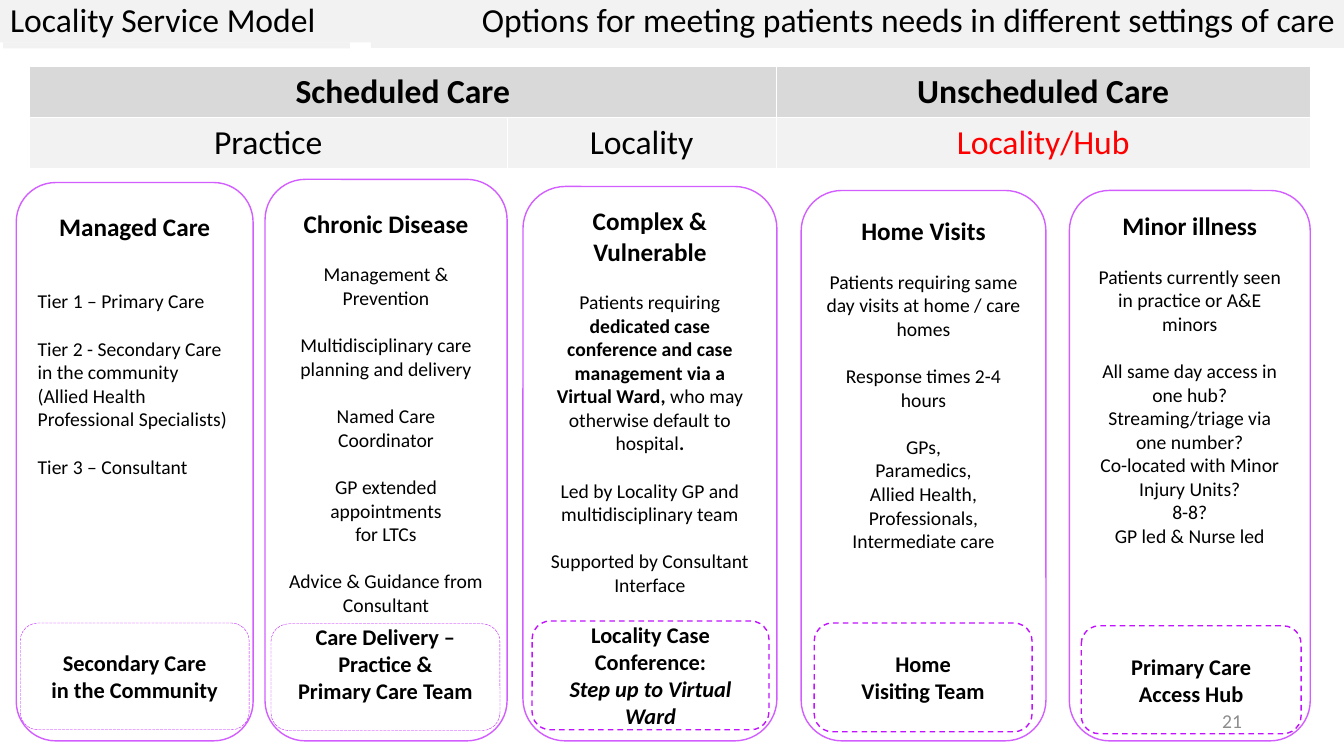
import pptx
import pptx.util
import pptx.dml.color
import pptx.enum.dml
import pptx.enum.shapes
import pptx.enum.text

Cm = pptx.util.Cm
Pt = pptx.util.Pt
Align = pptx.enum.text.PP_ALIGN
Anchor = pptx.enum.text.MSO_ANCHOR
Dash = pptx.enum.dml.MSO_LINE
Kind = pptx.enum.shapes.MSO_SHAPE


def rgb(value):
    return pptx.dml.color.RGBColor.from_string(value)


class Deck:
    font = "Calibri"
    ink = "000000"
    pale = "F2F2F2"
    grey = "D9D9D9"
    card_line = "D35EFF"
    team_line = "C111FF"
    card_bottom = 18.67
    gap = 17

    def __init__(self, prs):
        self.s = prs.slides.add_slide(prs.slide_layouts[5])

    def fill_text(self, p, text, size, bold=False, color=ink, align=Align.CENTER, before=0):
        p.alignment = align
        p.space_before = Pt(before)
        p.font.name = self.font
        p.font.size = Pt(size)
        p.font.bold = bold
        p.font.color.rgb = rgb(color)
        for i, part in enumerate(text.split("*")):
            if part:
                r = p.add_run()
                r.text = part
                if i % 2:
                    r.font.bold = True

    def place(self, sp, x, y, w, h):
        sp.left, sp.top, sp.width, sp.height = Cm(x), Cm(y), Cm(w), Cm(h)

    def paint(self, sp, color):
        sp.fill.solid()
        sp.fill.fore_color.rgb = rgb(color)

    def bar(self, x, y, w, h):
        sp = self.s.shapes.add_shape(Kind.RECTANGLE, Cm(x), Cm(y), Cm(w), Cm(h))
        sp.shadow.inherit = False
        self.paint(sp, self.pale)
        sp.line.fill.background()
        return sp

    def heading(self, sp, text, align, anchor):
        tf = sp.text_frame
        tf.word_wrap = True
        tf.auto_size = pptx.enum.text.MSO_AUTO_SIZE.NONE
        tf.vertical_anchor = anchor
        p = tf.paragraphs[0]
        self.fill_text(p, text, 24, align=align)
        p.line_spacing = 0.9

    def title(self, text, x, y, w, h):
        sp = self.s.shapes.title
        self.place(sp, x, y, w, h)
        self.paint(sp, self.pale)
        self.heading(sp, text, Align.LEFT, Anchor.MIDDLE)

    def subtitle(self, text, x, y, w, h):
        self.heading(self.bar(x, y, w, h), text, Align.RIGHT, Anchor.TOP)

    def table(self, x, y, widths, row_height, rows):
        frame = self.s.shapes.add_table(len(rows), len(widths), Cm(x), Cm(y),
                                        Cm(sum(widths)), Cm(row_height * len(rows)))
        table = frame.table
        table.horz_banding = False
        for column, width in zip(table.columns, widths):
            column.width = Cm(width)
        for i, (fill, bold, cells) in enumerate(rows):
            table.rows[i].height = Cm(row_height)
            for j, (text, color) in enumerate(cells):
                cell = table.cell(i, j)
                self.paint(cell, fill)
                self.fill_text(cell.text_frame.paragraphs[0], text, 24, bold, color)
        table.cell(0, 0).merge(table.cell(0, 1))

    def rounded(self, x, y, w, h, color, weight, dash=None):
        sp = self.s.shapes.add_shape(Kind.ROUNDED_RECTANGLE, Cm(x), Cm(y), Cm(w), Cm(h))
        sp.shadow.inherit = False
        sp.fill.background()
        sp.line.color.rgb = rgb(color)
        sp.line.width = Pt(weight)
        if dash:
            sp.line.dash_style = dash
        sp.text_frame.word_wrap = True
        return sp

    def card(self, x, y, w, inset, name, groups, align=Align.CENTER, first_gap=gap):
        sp = self.rounded(x, y, w, self.card_bottom - y, self.card_line, 1)
        tf = sp.text_frame
        tf.vertical_anchor = Anchor.TOP
        tf.margin_top = Cm(inset)
        self.fill_text(tf.paragraphs[0], name, 18, True)
        for i, group in enumerate(groups):
            for j, text in enumerate(group):
                before = 0 if j else self.gap if i else first_gap
                self.fill_text(tf.add_paragraph(), text, 14, align=align, before=before)

    def team(self, x, y, w, h, lines, weight=1, dash=Dash.DASH, bottom=0.13, italic=()):
        tf = self.rounded(x, y, w, h, self.team_line, weight, dash).text_frame
        tf.vertical_anchor = Anchor.MIDDLE
        tf.margin_bottom = Cm(bottom)
        for i, text in enumerate(lines):
            p = tf.add_paragraph() if i else tf.paragraphs[0]
            self.fill_text(p, text, 16, True)
            p.font.italic = i in italic

    def number(self, text, x, y, w, h):
        tf = self.s.shapes.add_textbox(Cm(x), Cm(y), Cm(w), Cm(h)).text_frame
        tf.word_wrap = True
        tf.vertical_anchor = Anchor.MIDDLE
        self.fill_text(tf.paragraphs[0], text, 14, color="8C8C8C", align=Align.RIGHT)


def main():
    prs = pptx.Presentation()
    prs.slide_width, prs.slide_height = Cm(33.87), Cm(19.05)
    deck = Deck(prs)
    ink = deck.ink

    deck.title("Locality Service Model", 0, 0, 9.75, 1.07)
    deck.bar(0.08, 1.07, 8.74, 0.15)
    deck.subtitle("Options for meeting patients needs in different settings of care",
                  9.35, -0.03, 24.54, 1.24)

    deck.table(0.74, 1.68, [12.04, 6.78, 13.46], 1.27, [
        (deck.grey, True, [("Scheduled Care", ink), ("", ink), ("Unscheduled Care", ink)]),
        (deck.pale, False, [("Practice", ink), ("Locality", ink), ("Locality/Hub", "FF0000")]),
    ])

    deck.card(0.41, 4.6, 5.97, 0.44, "Managed Care", [
        ["Tier 1 – Primary Care"],
        ["Tier 2 - Secondary Care in the community", "(Allied Health Professional Specialists)"],
        ["Tier 3 – Consultant"],
    ], Align.LEFT, 2 * deck.gap)
    deck.card(6.68, 4.52, 6.1, 0.43, "Chronic Disease", [
        ["Management &", "Prevention"],
        ["Multidisciplinary care planning and delivery"],
        ["Named Care Coordinator"],
        ["GP extended appointments", "for LTCs"],
        ["Advice & Guidance from Consultant"],
    ])
    deck.card(13.18, 4.7, 6.4, 0.17, "Complex & Vulnerable", [
        ["Patients requiring *dedicated case conference and case management via a "
         "Virtual Ward,* who may otherwise default to hospital*.*"],
        ["Led by Locality GP and multidisciplinary team"],
        ["Supported by Consultant Interface"],
    ])
    deck.card(20.19, 4.8, 6.17, 0.33, "Home Visits", [
        ["Patients requiring same day visits at home / care homes"],
        ["Response times 2-4 hours"],
        ["GPs,", "Paramedics,", "Allied Health, Professionals, Intermediate care"],
    ])
    deck.card(26.95, 4.8, 6.07, 0.21, "Minor illness", [
        ["Patients currently seen in practice or A&E minors"],
        ["All same day access in one hub?", "Streaming/triage via one number?",
         "Co-located with Minor Injury Units?", "8-8?", "GP led & Nurse led"],
    ])

    deck.number("21", 23.93, 17.65, 7.62, 1.02)

    deck.team(0.51, 15.7, 5.77, 2.69, ["Secondary Care", "in the Community"],
              0.25, Dash.LONG_DASH)
    deck.team(6.83, 15.72, 5.77, 2.69, ["Care Delivery –", "Practice &", "Primary Care Team"],
              0.25, Dash.LONG_DASH, 0.82)
    deck.team(13.41, 15.65, 5.97, 2.74,
              ["Locality Case", "Conference:", "Step up to Virtual Ward"], italic=(2,))
    deck.team(20.52, 15.7, 5.49, 2.74, ["Home", "Visiting Team"])
    deck.team(27.25, 15.77, 5.54, 2.72, ["Primary Care", "Access Hub"])

    prs.save("out.pptx")


if __name__ == "__main__":
    main()
